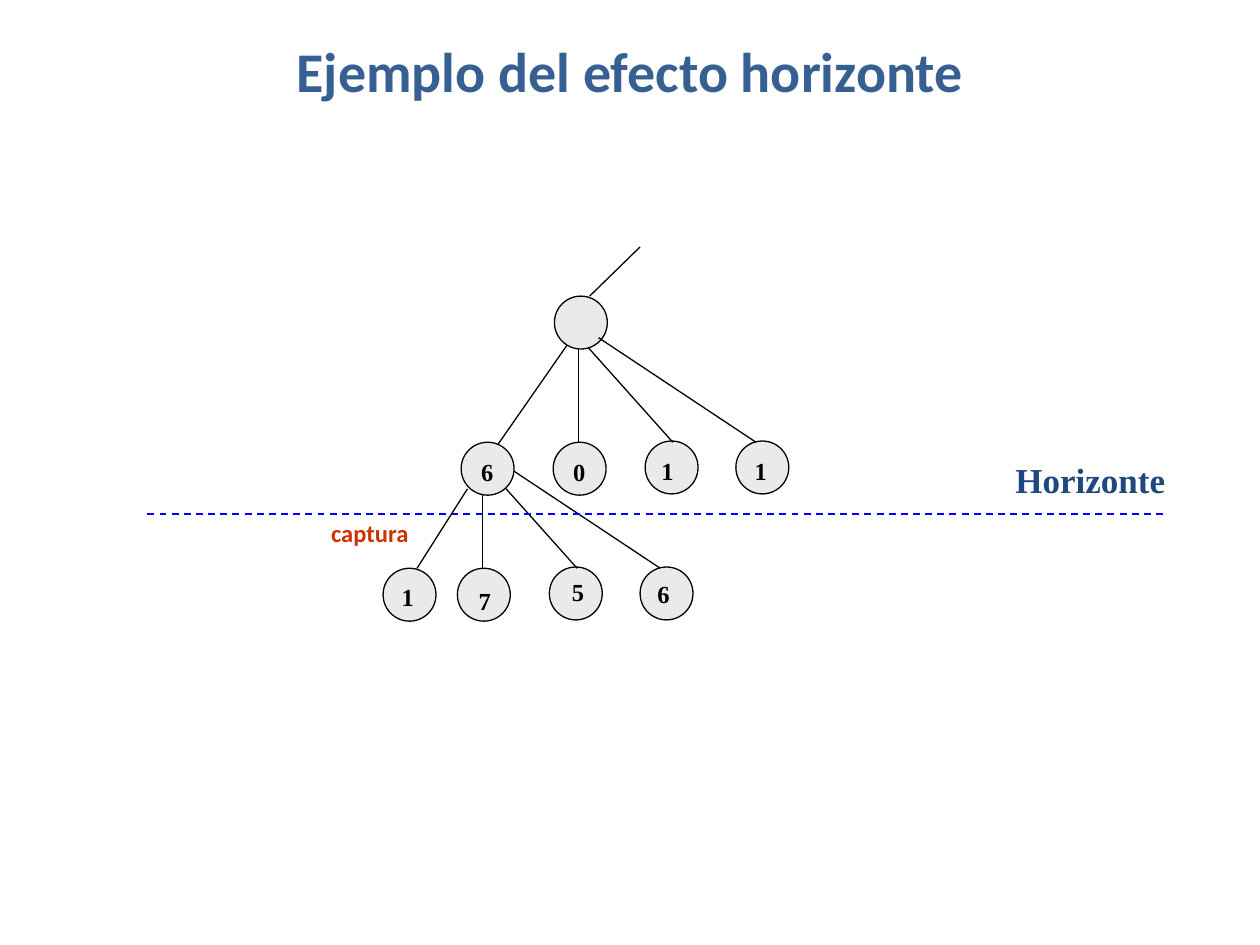
import pptx
import pptx.dml.color
import pptx.enum.dml
import pptx.enum.shapes
import pptx.enum.text
import pptx.oxml.ns
import pptx.util
from lxml import etree
from pptx.util import Inches

DIAMETER = 0.42
SERIF = "Times New Roman"
SANS = "Calibri"

ROOT = (4.4, 2.35)
EXPANDED = (3.66, 3.51)
HORIZON_NODES = [(4.39, 3.51), (5.12, 3.5), (5.84, 3.5)]
HIDDEN_NODES = [(3.04, 4.51), (3.63, 4.51), (4.36, 4.5), (5.08, 4.5)]
VALUES = [
    ("6", 3.72, 3.58), ("0", 4.45, 3.58), ("1", 5.15, 3.57), ("1", 5.89, 3.57),
    ("1", 3.09, 4.57), ("7", 3.7, 4.6), ("5", 4.44, 4.53), ("6", 5.12, 4.55),
]
FAN = [((4.59, 2.76), (4.59, 3.51)), ((4.67, 2.76), (5.34, 3.51)), ((4.75, 2.68), (6, 3.51))]
FAN_SHIFT = (-0.76, 1)
LEFT_BRANCHES = [((3.31, 4.51), (3.71, 3.88)), ((3.95, 3.53), (4.5, 2.74))]
ROOT_BRANCH = ((4.68, 2.35), (5.08, 1.96))
HORIZON = ((1.17, 4.08), (9.25, 4.08))


def rgb(value):
    """Return the colour for a hex string."""
    return pptx.dml.color.RGBColor.from_string(value)


def style_text(paragraph, font_name, size, color):
    """Make the runs of a paragraph bold in the given font, size and colour."""
    for run in paragraph.runs:
        run.font.name = font_name
        run.font.size = pptx.util.Pt(size)
        run.font.bold = True
        run.font.color.rgb = rgb(color)


def set_title(slide, text):
    """Place and format the slide title."""
    title = slide.shapes.title
    title.left, title.top = Inches(0.5), Inches(0.05)
    title.width, title.height = Inches(9), Inches(1.02)
    title.text_frame.text = text
    title.text_frame.vertical_anchor = pptx.enum.text.MSO_ANCHOR.MIDDLE
    paragraph = title.text_frame.paragraphs[0]
    paragraph.alignment = pptx.enum.text.PP_ALIGN.CENTER
    style_text(paragraph, SANS, 32, "376092")


def add_node(slide, position):
    """Draw one tree node with its top left corner at the position."""
    left, top = position
    node = slide.shapes.add_shape(
        pptx.enum.shapes.MSO_SHAPE.OVAL,
        Inches(left), Inches(top), Inches(DIAMETER), Inches(DIAMETER))
    node.shadow.inherit = False
    node.fill.solid()
    node.fill.fore_color.rgb = rgb("EAEAEA")
    node.line.color.rgb = rgb("000000")
    node.line.width = pptx.util.Pt(0.75)


def add_line(slide, start, end, color="000000", width=0.75, dash=None):
    """Draw a straight line between two points."""
    line = slide.shapes.add_connector(
        pptx.enum.shapes.MSO_CONNECTOR.STRAIGHT,
        Inches(start[0]), Inches(start[1]), Inches(end[0]), Inches(end[1]))
    line.line.color.rgb = rgb(color)
    line.line.width = pptx.util.Pt(width)
    if dash is not None:
        line.line.dash_style = dash
    etree.SubElement(line._element.spPr, pptx.oxml.ns.qn("a:effectLst"))


def add_label(slide, text, left, top, width=0.3, height=0.33,
              font_name=SERIF, size=14, color="000000"):
    """Add a one-line bold label that fits its text."""
    label = slide.shapes.add_textbox(
        Inches(left), Inches(top), Inches(width), Inches(height))
    frame = label.text_frame
    frame.word_wrap = False
    frame.auto_size = pptx.enum.text.MSO_AUTO_SIZE.SHAPE_TO_FIT_TEXT
    frame.text = text
    style_text(frame.paragraphs[0], font_name, size, color)


def add_fan(slide, shift=(0, 0)):
    """Draw the three branches that leave a parent node, moved by the shift."""
    for branch in FAN:
        start, end = [(x + shift[0], y + shift[1]) for x, y in branch]
        add_line(slide, start, end)


def main():
    """Build the slide on the horizon effect."""
    presentation = pptx.Presentation()
    presentation.slide_width, presentation.slide_height = Inches(10), Inches(7.5)
    slide = presentation.slides.add_slide(presentation.slide_layouts[5])

    set_title(slide, "Ejemplo del efecto horizonte")
    for position in [ROOT] + HORIZON_NODES:
        add_node(slide, position)
    add_fan(slide)
    for position in HIDDEN_NODES:
        add_node(slide, position)
    add_fan(slide, FAN_SHIFT)
    add_node(slide, EXPANDED)
    add_line(slide, *HORIZON, color="0000FF", width=1,
             dash=pptx.enum.dml.MSO_LINE.DASH)
    add_label(slide, "Horizonte", 7.96, 3.59, 1.41, 0.44, size=20, color="1F497D")
    for value, left, top in VALUES:
        add_label(slide, value, left, top)
    for start, end in LEFT_BRANCHES + [ROOT_BRANCH]:
        add_line(slide, start, end)
    add_label(slide, "captura", 2.53, 4.06, 0.9, font_name=SANS, color="CC3300")

    presentation.save("out.pptx")


if __name__ == "__main__":
    main()
